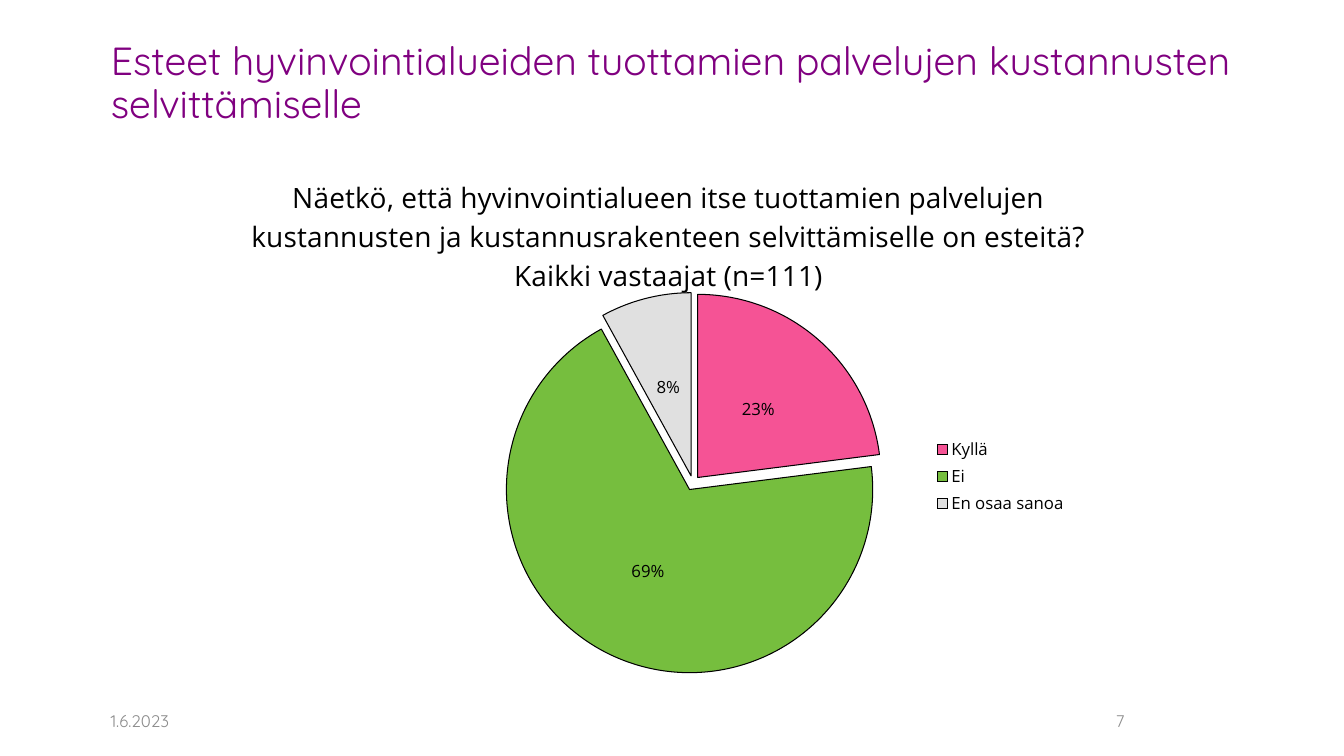
"""Build a slide with a pie chart on obstacles to finding out the cost of services."""
from dataclasses import dataclass

import lxml.etree
import pptx
import pptx.chart.data
import pptx.dml.color
import pptx.enum.chart
import pptx.enum.text
import pptx.oxml.ns
import pptx.util

Cm = pptx.util.Cm
Pt = pptx.util.Pt
RGBColor = pptx.dml.color.RGBColor
qn = pptx.oxml.ns.qn
PP_ALIGN = pptx.enum.text.PP_ALIGN
MSO_ANCHOR = pptx.enum.text.MSO_ANCHOR

PURPLE = RGBColor(0x80, 0x00, 0x80)
GREY = RGBColor(0x8C, 0x8C, 0x8C)
BLACK = RGBColor(0x00, 0x00, 0x00)
PINK = RGBColor(0xF3, 0x29, 0x7B)
GREEN = RGBColor(0x54, 0xAE, 0x0E)
LIGHT_GREY = RGBColor(0xD9, 0xD9, 0xD9)
HEADING_FONT = "Quicksand"
CHART_FONT = "Open Sans"


@dataclass
class Answer:
    label: str
    share: float
    color: RGBColor


@dataclass
class FooterItem:
    text: str
    left: float
    width: float
    align: PP_ALIGN


ANSWERS = [
    Answer("Kyllä", 0.23, PINK),
    Answer("Ei", 0.69, GREEN),
    Answer("En osaa sanoa", 0.08, LIGHT_GREY),
]
FOOTER = [
    FooterItem("1.6.2023", 2.54, 7.06, PP_ALIGN.LEFT),
    FooterItem("7", 24.28, 7.9, PP_ALIGN.CENTER),
]
QUESTION = [
    "Näetkö, että hyvinvointialueen itse tuottamien palvelujen "
    "kustannusten ja kustannusrakenteen selvittämiselle on esteitä?",
    "Kaikki vastaajat (n=111)",
]


def style_font(font, name: str, size: float, color: RGBColor) -> None:
    font.name = name
    font.size = Pt(size)
    font.bold = False
    font.color.rgb = color


def add_heading(slide) -> None:
    heading = slide.shapes.title
    heading.left, heading.top = Cm(2.54), Cm(0.58)
    heading.width, heading.height = Cm(29.64), Cm(2.74)
    frame = heading.text_frame
    frame.text = "Esteet hyvinvointialueiden tuottamien palvelujen kustannusten selvittämiselle"
    frame.auto_size = pptx.enum.text.MSO_AUTO_SIZE.NONE
    frame.vertical_anchor = MSO_ANCHOR.BOTTOM
    paragraph = frame.paragraphs[0]
    paragraph.alignment = PP_ALIGN.LEFT
    paragraph.line_spacing = 0.9
    style_font(paragraph.font, HEADING_FONT, 28, PURPLE)


def add_footer_item(slide, item: FooterItem) -> None:
    box = slide.shapes.add_textbox(Cm(item.left), Cm(17.65), Cm(item.width), Cm(1.02))
    frame = box.text_frame
    frame.word_wrap = True
    frame.vertical_anchor = MSO_ANCHOR.MIDDLE
    paragraph = frame.paragraphs[0]
    paragraph.text = item.text
    paragraph.alignment = item.align
    style_font(paragraph.font, HEADING_FONT, 12, GREY)


def set_layout(part, index: int, **settings) -> None:
    for old in part.findall(qn("c:layout")):
        part.remove(old)
    layout = lxml.etree.Element(qn("c:layout"))
    manual = lxml.etree.SubElement(layout, qn("c:manualLayout"))
    for tag, value in settings.items():
        lxml.etree.SubElement(manual, qn(f"c:{tag}")).set("val", str(value))
    part.insert(index, layout)


def style_slices(series) -> None:
    series.format.line.color.rgb = BLACK
    series.format.line.width = Pt(0.75)
    explosion = lxml.etree.Element(qn("c:explosion"))
    explosion.set("val", "4")
    series._element.find(qn("c:spPr")).addnext(explosion)
    for index, answer in enumerate(ANSWERS):
        look = series.points[index].format
        look.fill.solid()
        look.fill.fore_color.rgb = answer.color
        look.line.color.rgb = BLACK
        look.line.width = Pt(0.75)
    for color in series._element.iterfind(f"{qn('c:dPt')}/{qn('c:spPr')}/{qn('a:solidFill')}/{qn('a:srgbClr')}"):
        lxml.etree.SubElement(color, qn("a:alpha")).set("val", "80000")


def add_answer_pie(slide) -> None:
    data = pptx.chart.data.CategoryChartData(number_format="0%")
    data.categories = [answer.label for answer in ANSWERS]
    data.add_series("Vastaajat", [answer.share for answer in ANSWERS])
    chart = slide.shapes.add_chart(
        pptx.enum.chart.XL_CHART_TYPE.PIE, Cm(2.11), Cm(3.84), Cm(29.64), Cm(13.28), data
    ).chart
    style_font(chart.font, CHART_FONT, 10, BLACK)

    chart.has_title = True
    question = chart.chart_title.text_frame
    question.text = "\n".join(QUESTION)
    for paragraph in question.paragraphs:
        style_font(paragraph.font, CHART_FONT, 20, BLACK)

    chart.has_legend = True
    chart.legend.position = pptx.enum.chart.XL_LEGEND_POSITION.RIGHT
    chart.legend.include_in_layout = False
    style_font(chart.legend.font, CHART_FONT, 12, BLACK)

    plot = chart.plots[0]
    plot.vary_by_categories = True
    plot.has_data_labels = True
    labels = plot.data_labels
    labels.show_value = True
    labels.show_percentage = False
    labels.number_format = "0%"
    labels.number_format_is_linked = False
    labels.position = pptx.enum.chart.XL_LABEL_POSITION.CENTER
    style_font(labels.font, CHART_FONT, 12, BLACK)
    style_slices(plot.series[0])

    title = chart.chart_title._element
    root = title.getparent()
    set_layout(title, 1, xMode="edge", yMode="edge", x=0.14, y=0.04)
    set_layout(root.find(qn("c:plotArea")), 0, layoutTarget="inner", xMode="edge", yMode="edge",
               x=0.356, y=0.266, w=0.324, h=0.723)
    set_layout(root.find(qn("c:legend")), 1, xMode="edge", yMode="edge",
               x=0.722, y=0.535, w=0.115, h=0.16)


def main() -> None:
    deck = pptx.Presentation()
    deck.slide_width, deck.slide_height = Cm(33.87), Cm(19.05)
    slide = deck.slides.add_slide(deck.slide_layouts[5])
    add_heading(slide)
    add_answer_pie(slide)
    for item in FOOTER:
        add_footer_item(slide, item)
    deck.save("out.pptx")


if __name__ == "__main__":
    main()
